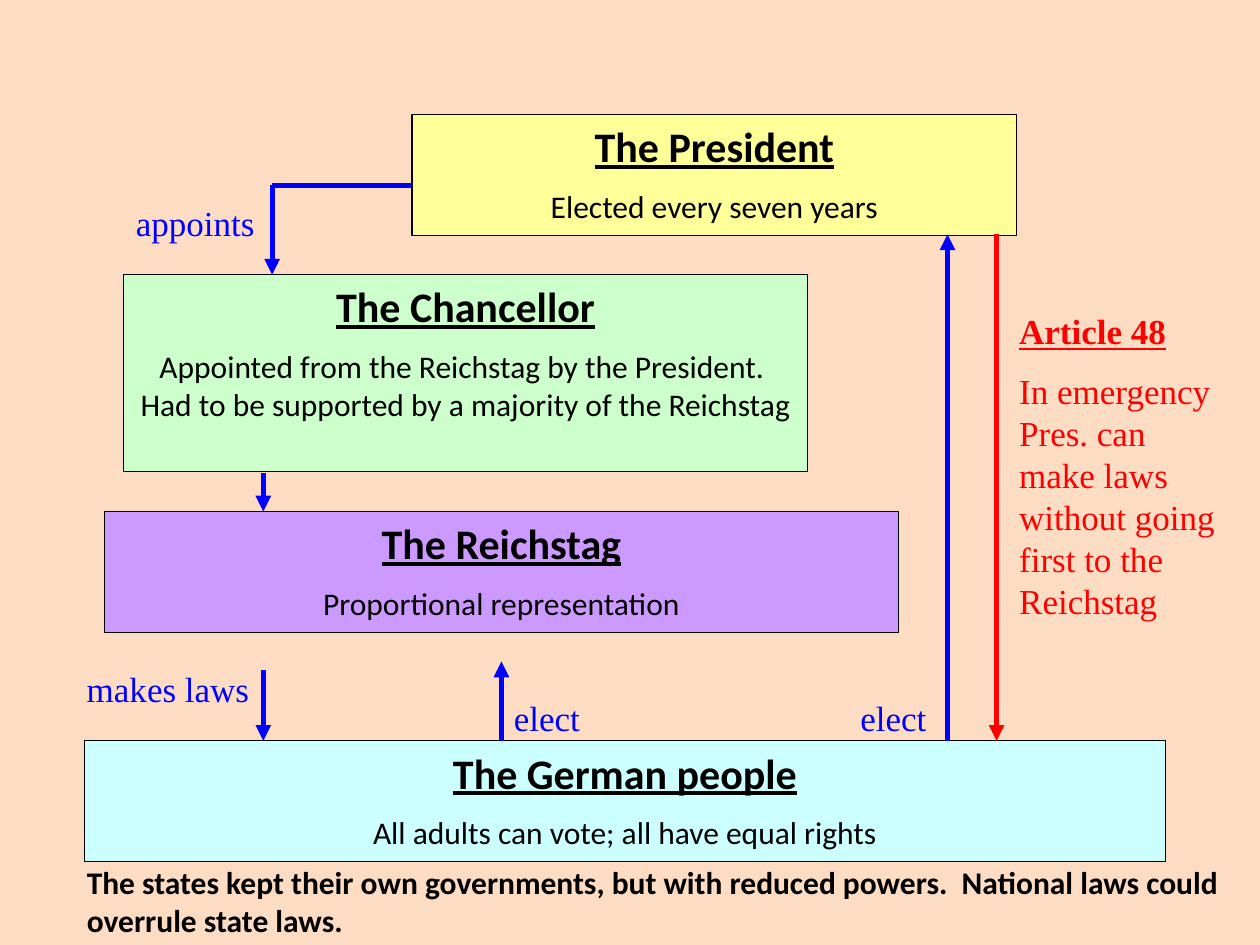
import pptx
import pptx.dml.color
import pptx.enum.shapes
import pptx.enum.text
import pptx.oxml.ns
import pptx.util
from lxml import etree

WIDTH, HEIGHT = pptx.util.Inches(10), pptx.util.Inches(7.5)
SANS, SERIF = "Calibri", "Times New Roman"
BLACK, BLUE, RED = "000000", "0000FF", "FF0000"
BOX_H, LABEL_H = 12.8, 5.73
PEOPLE_Y, REICHSTAG_Y, CHANCELLOR_Y = 78.4, 54.13, 29.07
PRESIDENT_Y = 12.13
PRESIDENT_BOTTOM = 24.8
LAW_X, APPOINT_X, VOTE_X, ELECT_X, DECREE_X = 20.9, 21.6, 39.8, 75.2, 79.1


def rgb(value):
    return pptx.dml.color.RGBColor.from_string(value)


def share(x, y):
    return round(WIDTH * x / 100), round(HEIGHT * y / 100)


def add_child(parent, tag, **attributes):
    return etree.SubElement(parent, pptx.oxml.ns.qn(tag), attributes)


def set_background(s, color, alpha):
    fill = s.background.fill
    fill.solid()
    fill.fore_color.rgb = rgb(color)
    for node in s.background._cSld.iter(pptx.oxml.ns.qn("a:srgbClr")):
        add_child(node, "a:alpha", val=str(alpha * 1000))


def write(tf, text, size, font=SANS, color=BLACK, bold=False, underline=False,
          align="LEFT", before=0, new=False):
    p = tf.add_paragraph() if new else tf.paragraphs[0]
    p.alignment = getattr(pptx.enum.text.PP_ALIGN, align)
    p.space_before = pptx.util.Pt(before)
    r = p.add_run()
    r.text = text
    r.font.size = pptx.util.Pt(size)
    r.font.name = font
    r.font.color.rgb = rgb(color)
    r.font.bold = bold
    r.font.underline = underline


def add_box(s, x, y, w, h, fill, title, detail):
    sp = s.shapes.add_shape(pptx.enum.shapes.MSO_SHAPE.RECTANGLE,
                            *share(x, y), *share(w, h))
    sp.shadow.inherit = False
    sp.fill.solid()
    sp.fill.fore_color.rgb = rgb(fill)
    sp.line.color.rgb = rgb(BLACK)
    sp.line.width = pptx.util.Pt(0.75)
    tf = sp.text_frame
    tf.word_wrap = True
    tf.vertical_anchor = pptx.enum.text.MSO_ANCHOR.TOP
    write(tf, title, 24, bold=True, underline=True, align="CENTER")
    write(tf, detail, 18, align="CENTER", before=9, new=True)


def add_text(s, x, y, w, h, text, size=20, **style):
    tf = s.shapes.add_textbox(*share(x, y), *share(w, h)).text_frame
    tf.word_wrap = True
    write(tf, text, size, **style)
    return tf


def add_line(s, start, end, color=BLUE, arrow=True):
    sp = s.shapes.add_connector(pptx.enum.shapes.MSO_CONNECTOR.STRAIGHT,
                                *share(*start), *share(*end))
    sp.line.color.rgb = rgb(color)
    sp.line.width = pptx.util.Pt(3)
    if arrow:
        add_child(sp.line._get_or_add_ln(), "a:tailEnd", type="triangle")
    add_child(sp._element.spPr, "a:effectLst")


def main():
    prs = pptx.Presentation()
    prs.slide_width, prs.slide_height = WIDTH, HEIGHT
    s = prs.slides.add_slide(prs.slide_layouts[6])
    set_background(s, "FCD5B5", 79)

    for box in (
        (6.7, PEOPLE_Y, 85.8, BOX_H, "CCFFFF", "The German people",
         "All adults can vote; all have equal rights"),
        (8.3, REICHSTAG_Y, 63, BOX_H, "CC99FF", "The Reichstag",
         "Proportional representation"),
        (9.8, CHANCELLOR_Y, 54.3, 20.8, "CCFFCC", "The Chancellor",
         "Appointed from the Reichstag by the President.  "
         "Had to be supported by a majority of the Reichstag"),
        (32.7, PRESIDENT_Y, 48, BOX_H, "FFFF99", "The President",
         "Elected every seven years"),
    ):
        add_box(s, *box)

    article = add_text(s, 79.9, 32.13, 18.1, 35.07, "Article 48",
                       font=SERIF, color=RED, bold=True, underline=True)
    write(article, "In emergency Pres. can make laws without going first to "
          "the Reichstag", 20, font=SERIF, color=RED, before=10, new=True)

    add_line(s, (32.7, 19.6), (APPOINT_X, 19.6), arrow=False)
    for x, start, end, color in (
        (APPOINT_X, 19.6, CHANCELLOR_Y, BLUE),
        (LAW_X, 50, REICHSTAG_Y, BLUE),
        (LAW_X, 70.93, PEOPLE_Y, BLUE),
        (VOTE_X, PEOPLE_Y, 70, BLUE),
        (ELECT_X, PEOPLE_Y, PRESIDENT_BOTTOM, BLUE),
        (DECREE_X, PRESIDENT_BOTTOM, PEOPLE_Y, RED),
    ):
        add_line(s, (x, start), (x, end), color)

    for x, y, w, label in (
        (9.8, 20.67, 15, "appoints"),
        (5.9, 70, 15.7, "makes laws"),
        (VOTE_X, 73.07, 10.2, "elect"),
        (67.3, 73.07, 10.2, "elect"),
    ):
        add_text(s, x, y, w, LABEL_H, label, font=SERIF, color=BLUE)

    add_text(s, 5.9, 90.67, 94.1, 9.33,
             "The states kept their own governments, but with reduced powers.  "
             "National laws could overrule state laws.", 18, bold=True)
    prs.save("out.pptx")


if __name__ == "__main__":
    main()
